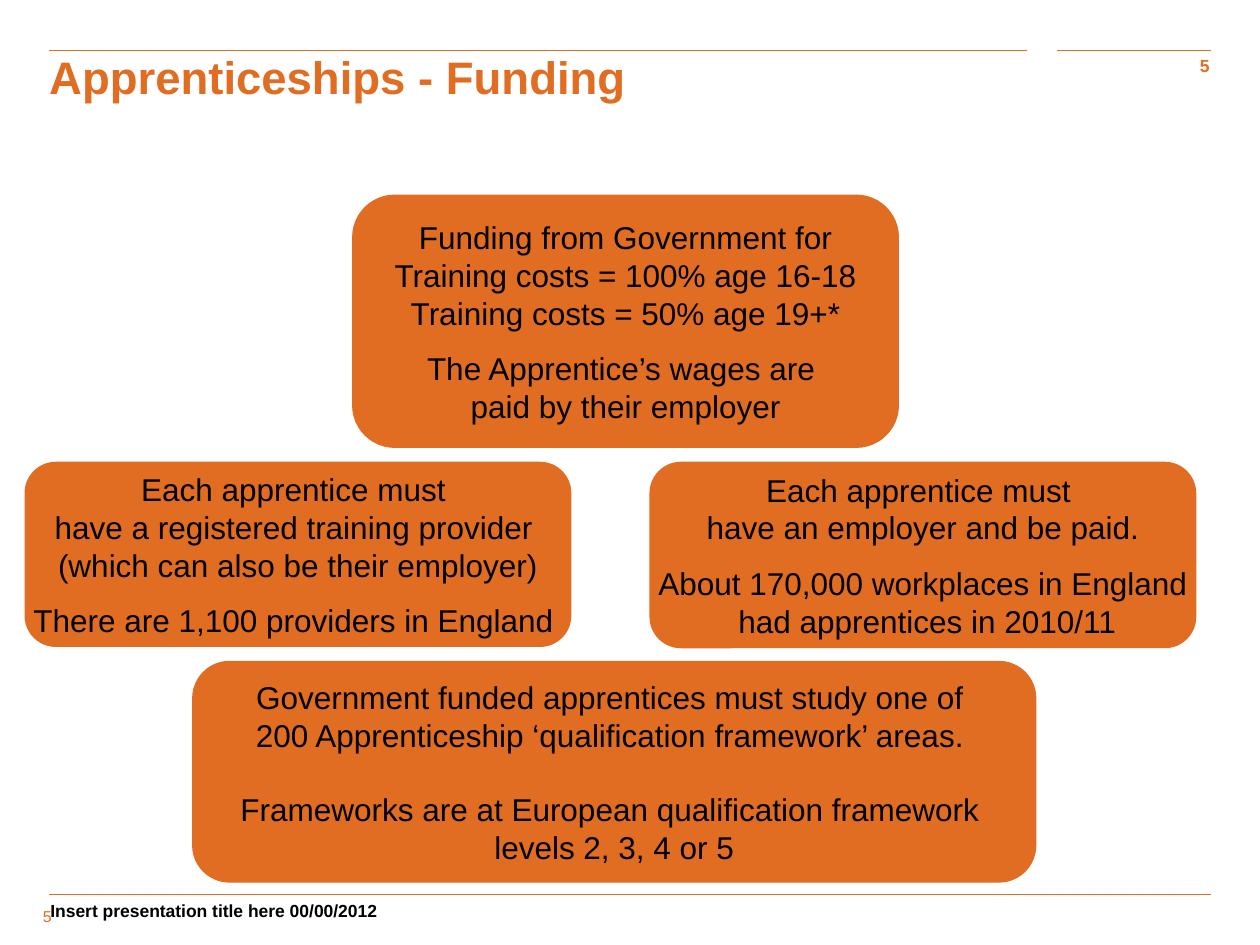
from pptx import Presentation
from pptx.dml.color import RGBColor
from pptx.enum.shapes import MSO_CONNECTOR, MSO_SHAPE
from pptx.enum.text import MSO_ANCHOR, MSO_AUTO_SIZE, PP_ALIGN
from pptx.oxml.ns import qn
from pptx.util import Inches, Pt
from lxml.etree import SubElement

ORANGE = RGBColor(0xE1, 0x6D, 0x22)
BLACK = RGBColor(0, 0, 0)


class FundingSlide:
    font = "Arial"
    accent = ORANGE
    rule_width = Pt(0.75)

    def __init__(self, deck):
        self.slide = deck.slides.add_slide(deck.slide_layouts[5])

    def add_lines(self, frame, groups, size, color, bold=False,
                  align=PP_ALIGN.LEFT, gap=0):
        """Add groups of lines, with a gap before each group but the first."""
        lines = [(text, gap if g and not i else 0)
                 for g, group in enumerate(groups) for i, text in enumerate(group)]
        for n, (text, before) in enumerate(lines):
            paragraph = frame.add_paragraph() if n else frame.paragraphs[0]
            paragraph.alignment = align
            paragraph.space_before = Pt(before)
            run = paragraph.add_run()
            run.text = text
            style = {"name": self.font, "size": Pt(size), "bold": bold}
            for key, value in style.items():
                setattr(run.font, key, value)
            run.font.color.rgb = color

    def set_frame(self, frame, top=0, anchor=MSO_ANCHOR.TOP):
        layout = {"margin_left": 0, "margin_right": 0, "margin_bottom": 0,
                  "margin_top": Inches(top), "vertical_anchor": anchor,
                  "word_wrap": True, "auto_size": MSO_AUTO_SIZE.NONE}
        for key, value in layout.items():
            setattr(frame, key, value)

    def title(self, text, left, top, width, height):
        heading = self.slide.shapes.title
        place = {"left": left, "top": top, "width": width, "height": height}
        for key, value in place.items():
            setattr(heading, key, Inches(value))
        self.set_frame(heading.text_frame)
        self.add_lines(heading.text_frame, [[text]], 26, self.accent, True)

    def label(self, text, box, size, color, bold=True, align=PP_ALIGN.LEFT,
              top=0.04, anchor=MSO_ANCHOR.TOP):
        frame = self.slide.shapes.add_textbox(*map(Inches, box)).text_frame
        self.set_frame(frame, top, anchor)
        self.add_lines(frame, [[text]], size, color, bold, align)

    def rule(self, start, end, y):
        line = self.slide.shapes.add_connector(
            MSO_CONNECTOR.STRAIGHT, *map(Inches, (start, y, end, y)))
        line.line.color.rgb = self.accent
        line.line.width = self.rule_width
        SubElement(line._element.spPr, qn("a:effectLst"))

    def card(self, groups, box, gap=10):
        card = self.slide.shapes.add_shape(
            MSO_SHAPE.FLOWCHART_ALTERNATE_PROCESS, *map(Inches, box))
        card.shadow.inherit = False
        card.fill.solid()
        card.fill.fore_color.rgb = self.accent
        card.line.color.rgb = self.accent
        card.line.width = self.rule_width
        frame = card.text_frame
        frame.word_wrap = False
        frame.vertical_anchor = MSO_ANCHOR.MIDDLE
        self.add_lines(frame, groups, 18, BLACK, align=PP_ALIGN.CENTER, gap=gap)


def main():
    deck = Presentation()
    deck.slide_width, deck.slide_height = Inches(10), Inches(7.5)
    page = FundingSlide(deck)

    # Header and footer rules
    for start, end, y in [(0.39, 9.61, 7.1), (0.39, 8.15, 0.4), (8.39, 9.61, 0.4)]:
        page.rule(start, end, y)

    # Title, page numbers and footer
    page.title("Apprenticeships - Funding", 0.39, 0.39, 9.22, 0.68)
    page.label("5", (8.47, 0.4, 1.13, 0.4), 10, ORANGE, align=PP_ALIGN.RIGHT)
    page.label("Insert presentation title here 00/00/2012",
               (0.4, 7.1, 6.37, 0.4), 10, BLACK)
    page.label("5", (0.34, 7.11, 0.27, 0.24), 9, ORANGE, bold=False,
               top=0, anchor=MSO_ANCHOR.BOTTOM)

    # Government funding
    page.card([["Funding from Government for",
                "Training costs = 100% age 16-18",
                "Training costs = 50% age 19+*"],
               ["The Apprentice’s wages are ", "paid by their employer"]],
              (2.8, 1.55, 4.33, 2))

    # Employer and training provider
    page.card([["Each apprentice must ", "have an employer and be paid."],
               ["About 170,000 workplaces in England",
                " had apprentices in 2010/11"]],
              (5.16, 3.67, 4.33, 1.47))
    page.card([["Each apprentice must ",
                "have a registered training provider ",
                "(which can also be their employer)"],
               ["There are 1,100 providers in England "]],
              (0.2, 3.67, 4.33, 1.46))

    # Qualification frameworks
    page.card([["Government funded apprentices must study one of ",
                "200 Apprenticeship ‘qualification framework’ areas. "],
               ["Frameworks are at European qualification framework ",
                "levels 2, 3, 4 or 5"]],
              (1.53, 5.25, 6.69, 1.75), gap=21)

    deck.save("out.pptx")


if __name__ == "__main__":
    main()
